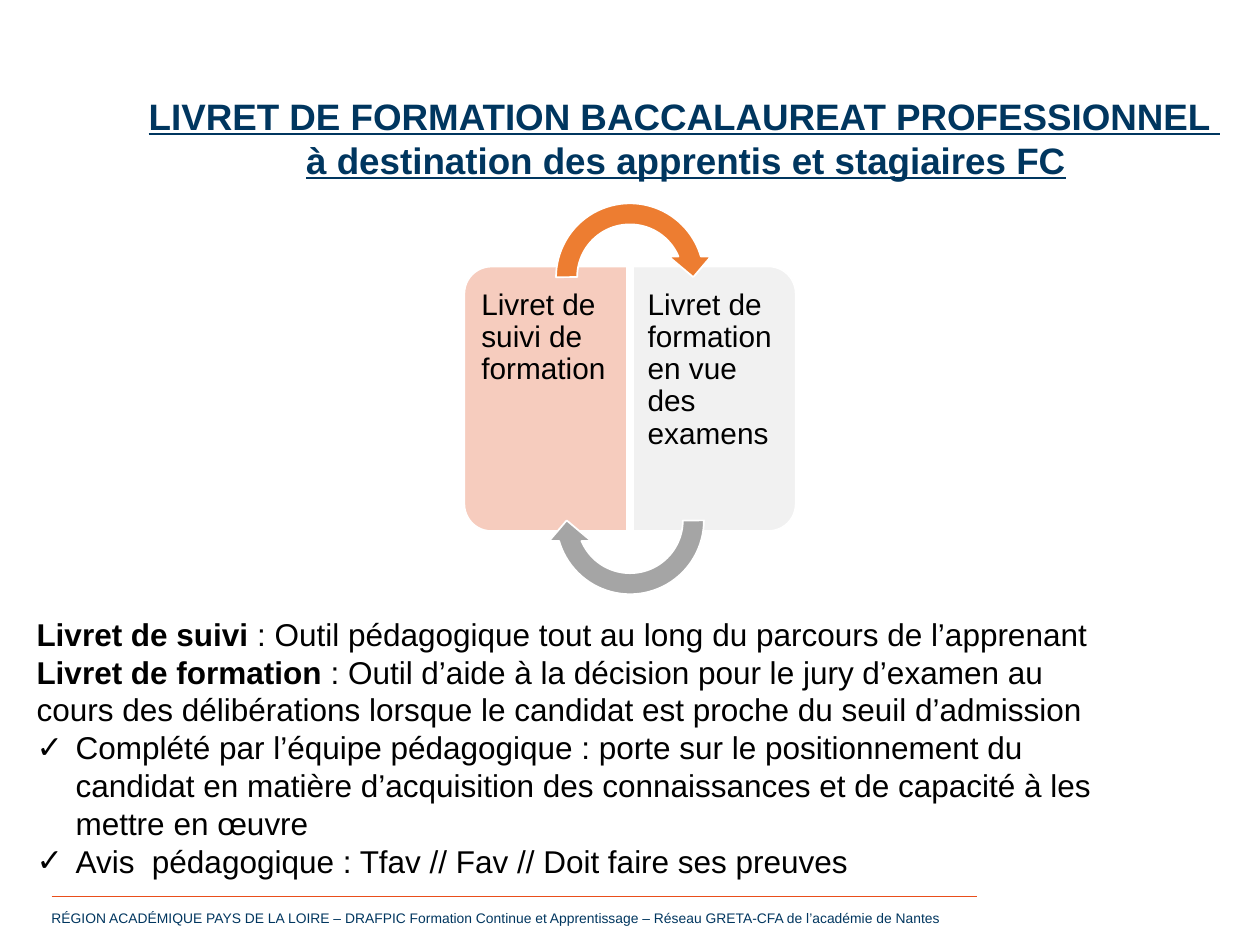
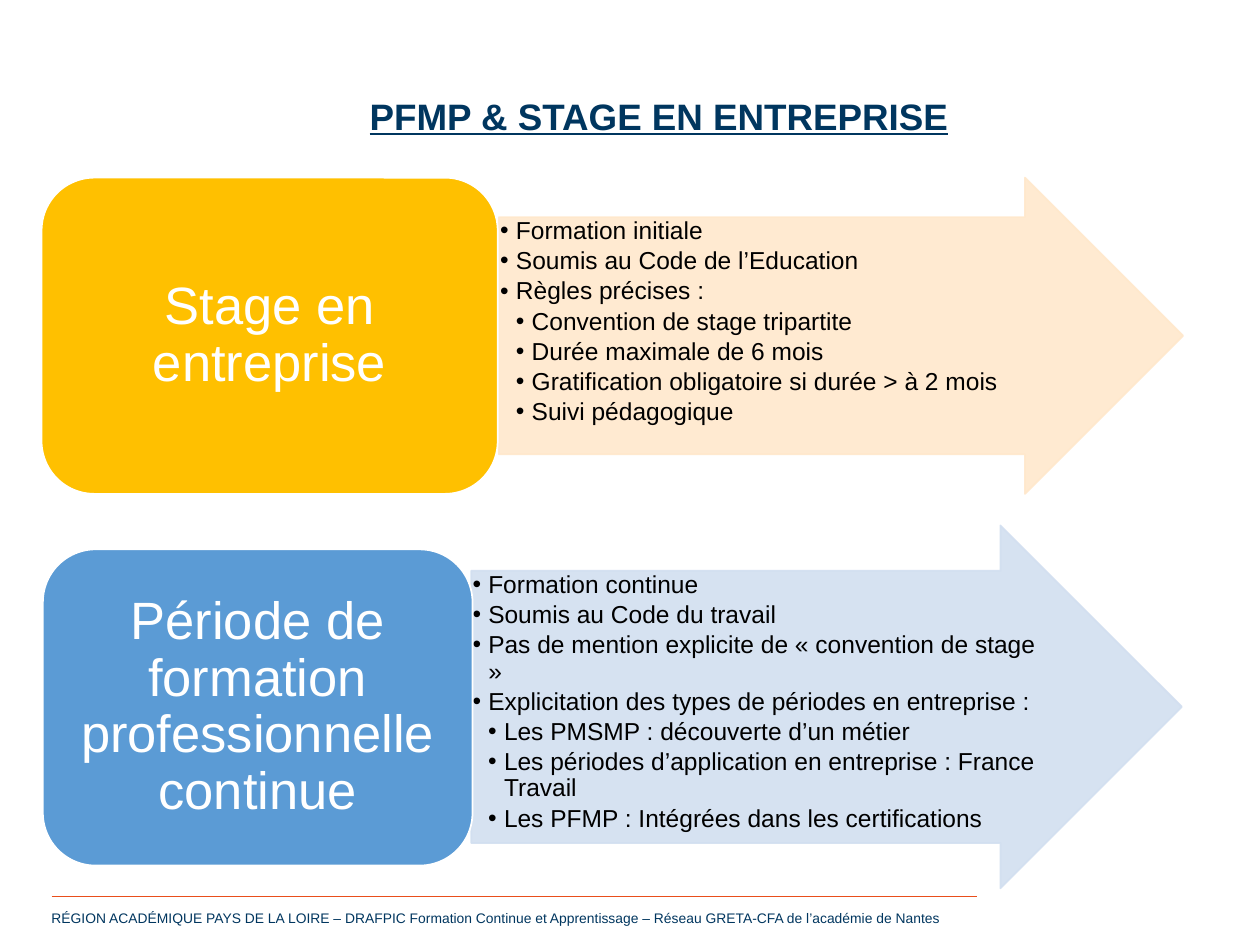
from lxml import etree
from pptx import Presentation
from pptx import util as u
from pptx.dml import color
from pptx.enum import shapes, text
from pptx.oxml import ns

FONT = "Arial"
NAVY, ORANGE_RULE = "00365F", "E94E1B"
BLACK, WHITE = "000000", "FFFFFF"
FOOTER = ("RÉGION ACADÉMIQUE PAYS DE LA LOIRE – DRAFPIC Formation Continue et "
          "Apprentissage – Réseau GRETA-CFA de l’académie de Nantes")
LEFT, CENTER = text.PP_ALIGN.LEFT, text.PP_ALIGN.CENTER
TOP, MIDDLE = text.MSO_ANCHOR.TOP, text.MSO_ANCHOR.MIDDLE
PRESET = shapes.MSO_SHAPE


def rgb(value):
    return color.RGBColor.from_string(value)


def place(box, left, top, width, height):
    box.left, box.top = u.Inches(left), u.Inches(top)
    box.width, box.height = u.Inches(width), u.Inches(height)


def prepare_frame(box, insets=(0.1, 0.05, 0.1, 0.05), anchor=TOP):
    frame = box.text_frame
    frame.word_wrap = True
    frame.auto_size = text.MSO_AUTO_SIZE.NONE
    frame.vertical_anchor = anchor
    (frame.margin_left, frame.margin_top,
     frame.margin_right, frame.margin_bottom) = map(u.Inches, insets)
    return frame


def set_bullet(para, bullet, margin, hanging):
    props = para._p.get_or_add_pPr()
    props.set("marL", str(u.Inches(margin)))
    props.set("indent", str(-u.Inches(hanging)))
    if bullet:
        etree.SubElement(props, ns.qn("a:buFont")).set("typeface", FONT)
        etree.SubElement(props, ns.qn("a:buChar")).set("char", bullet)
    else:
        etree.SubElement(props, ns.qn("a:buNone"))


def write(frame, words, size=18, ink=BLACK, bold=False, underline=False,
          align=LEFT, spacing=1.0, after=0, level=0, bullet=None,
          margin=0, hanging=0, lead=""):
    """Add one paragraph; lead is an opening span in bold."""
    para = frame.paragraphs[0]
    if para.runs:
        para = frame.add_paragraph()
    set_bullet(para, bullet, margin, hanging)
    para.level, para.alignment, para.line_spacing = level, align, spacing
    para.space_before, para.space_after = u.Pt(0), u.Pt(after)
    for part, heavy in ((lead, True), (words, bold)):
        if part:
            span = para.add_run()
            span.text = part
            span.font.name, span.font.size = FONT, u.Pt(size)
            span.font.bold, span.font.underline = heavy, underline
            span.font.color.rgb = rgb(ink)


def add_text(page, at, words, insets=(0.1, 0.05, 0.1, 0.05), **style):
    box = page.shapes.add_textbox(*map(u.Inches, at))
    write(prepare_frame(box, insets), words, **style)


def add_preset(page, kind, at, fill, line=WHITE, rotation=0, adjust=(),
               opacity=None):
    shape = page.shapes.add_shape(kind, *map(u.Inches, at))
    shape.shadow.inherit = False
    shape.rotation = rotation
    for index, value in enumerate(adjust):
        shape.adjustments[index] = value
    shape.fill.solid()
    shape.fill.fore_color.rgb = rgb(fill)
    shape.line.color.rgb = rgb(line)
    shape.line.width = u.Pt(1)
    if opacity:
        for paint in shape._element.spPr.iter(ns.qn("a:srgbClr")):
            etree.SubElement(paint, ns.qn("a:alpha")).set("val", str(opacity * 1000))
    return shape


def take_body(page, index, at, insets=(0.1, 0.05, 0.1, 0.05)):
    """Move a body placeholder into place, in front of the shapes drawn so far."""
    body = page.placeholders[index]
    place(body, *at)
    page.shapes._spTree.append(body._element)
    return prepare_frame(body, insets)


def add_page(deck, layout, title_at, title_lines):
    page = deck.slides.add_slide(deck.slide_layouts[layout])
    # Footer and its rule
    add_text(page, (0.31, 7.17, 7.44, 0.23), FOOTER, size=7.9, ink=NAVY)
    rule = page.shapes.add_connector(
        shapes.MSO_CONNECTOR.STRAIGHT, u.Inches(0.41), u.Inches(7.11),
        u.Inches(7.75), u.Inches(7.11))
    rule.line.color.rgb = rgb(ORANGE_RULE)
    rule.line.width = u.Pt(0.25)
    etree.SubElement(rule._element.spPr, ns.qn("a:effectLst"))
    # Title
    title = page.shapes.title
    place(title, *title_at)
    frame = prepare_frame(title)
    for words, align in title_lines:
        write(frame, words, size=21, ink=NAVY, bold=True, underline=True,
              align=align)
    return page


def add_booklet_half(page, left, rotation, fill, text_left, insets, words):
    add_preset(page, PRESET.ROUND_2_SAME_RECTANGLE, (left, 2.52, 2.1, 1.29),
               fill, rotation=rotation, adjust=(0.167, 0))
    add_text(page, (text_left, 2.18, 1.22, 1.98), words, insets,
             size=17, spacing=0.9)


def add_turning_arrow(page, top, rotation, fill):
    add_preset(page, PRESET.CIRCULAR_ARROW, (4.33, top, 1.34, 1.34), fill,
               rotation=rotation, adjust=(0.125, 11.423, 204.577, 108, 0.125))


def add_stage_row(page, index, label, label_at, label_fill,
                  arrow_at, arrow_fill, list_width, items):
    left, top, _, height = arrow_at
    add_preset(page, PRESET.RIGHT_ARROW, arrow_at, arrow_fill, line=arrow_fill,
               adjust=(0.75, 0.5), opacity=90)
    # The list fills the arrow's shaft, three quarters of its height
    frame = take_body(page, index,
                      (left, top + height / 8, list_width, height * 0.75),
                      insets=(0.01,) * 4)
    for level, words in items:
        write(frame, words, size=14, spacing=0.9, after=2.1, level=level,
              bullet="•", margin=0.125 * level, hanging=0.125)
    card = add_preset(page, PRESET.ROUNDED_RECTANGLE, label_at, label_fill)
    write(prepare_frame(card, (0.12, 0.06, 0.12, 0.06), MIDDLE), label,
          size=30, ink=WHITE, align=CENTER, spacing=0.9)


def build_booklet_page(deck):
    page = add_page(deck, 1, (1.08, 0.69, 8.73, 0.81), [
        ("LIVRET DE FORMATION BACCALAUREAT PROFESSIONNEL ", LEFT),
        ("à destination des apprentis et stagiaires FC", CENTER)])
    # Two booklet halves and the arrows that link them
    add_booklet_half(page, 3.28, 270, "F6CCBE", 3.75, (0.07, 0.12, 0.11, 0.12),
                     "Livret de suivi de formation")
    add_booklet_half(page, 4.62, 90, "F1F1F1", 5.03, (0.11, 0.12, 0.07, 0.12),
                     "Livret de formation en vue des examens")
    add_turning_arrow(page, 1.53, 0, "ED7D31")
    add_turning_arrow(page, 3.46, 180, "A5A5A5")
    # Explanations
    frame = take_body(page, 1, (0.19, 4.83, 8.78, 2.22))
    write(frame, ": Outil pédagogique tout au long du parcours de l’apprenant",
          lead="Livret de suivi ")
    write(frame, ": Outil d’aide à la décision pour le jury d’examen au cours des "
          "délibérations lorsque le candidat est proche du seuil d’admission",
          lead="Livret de formation ")
    for words in (
            "Complété par l’équipe pédagogique : porte sur le positionnement du "
            "candidat en matière d’acquisition des connaissances et de capacité "
            "à les mettre en œuvre",
            "Avis  pédagogique : Tfav // Fav // Doit faire ses preuves"):
        write(frame, words, bullet="✓", margin=0.31, hanging=0.31)


def build_placement_page(deck):
    page = add_page(deck, 3, (1.65, 0.69, 7.16, 0.45),
                    [("PFMP & STAGE EN ENTREPRISE", CENTER)])
    add_stage_row(page, 1, "Stage en entreprise", (0.33, 1.41, 3.62, 2.51),
                  "FFC000", (3.96, 1.41, 5.43, 2.51), "FFE8CC", 4.49, [
                      (1, "Formation initiale"),
                      (1, "Soumis au Code de l’Education"),
                      (1, "Règles précises :"),
                      (2, "Convention de stage tripartite"),
                      (2, "Durée maximale de 6 mois"),
                      (2, "Gratification obligatoire si durée > à 2 mois"),
                      (2, "Suivi pédagogique")])
    add_stage_row(page, 2, "Période de formation professionnelle continue",
                  (0.34, 4.36, 3.41, 2.51), "5B9BD5",
                  (3.74, 4.17, 5.64, 2.88), "D2DFF0", 4.56, [
                      (1, "Formation continue"),
                      (1, "Soumis au Code du travail"),
                      (1, "Pas de mention explicite de « convention de stage »"),
                      (1, "Explicitation des types de périodes en entreprise :"),
                      (2, "Les PMSMP : découverte d’un métier"),
                      (2, "Les périodes d’application en entreprise : France Travail"),
                      (2, "Les PFMP : Intégrées dans les certifications")])


def main():
    deck = Presentation()
    deck.slide_width, deck.slide_height = u.Inches(10), u.Inches(7.5)
    build_booklet_page(deck)
    build_placement_page(deck)
    deck.save("out.pptx")


if __name__ == "__main__":
    main()
